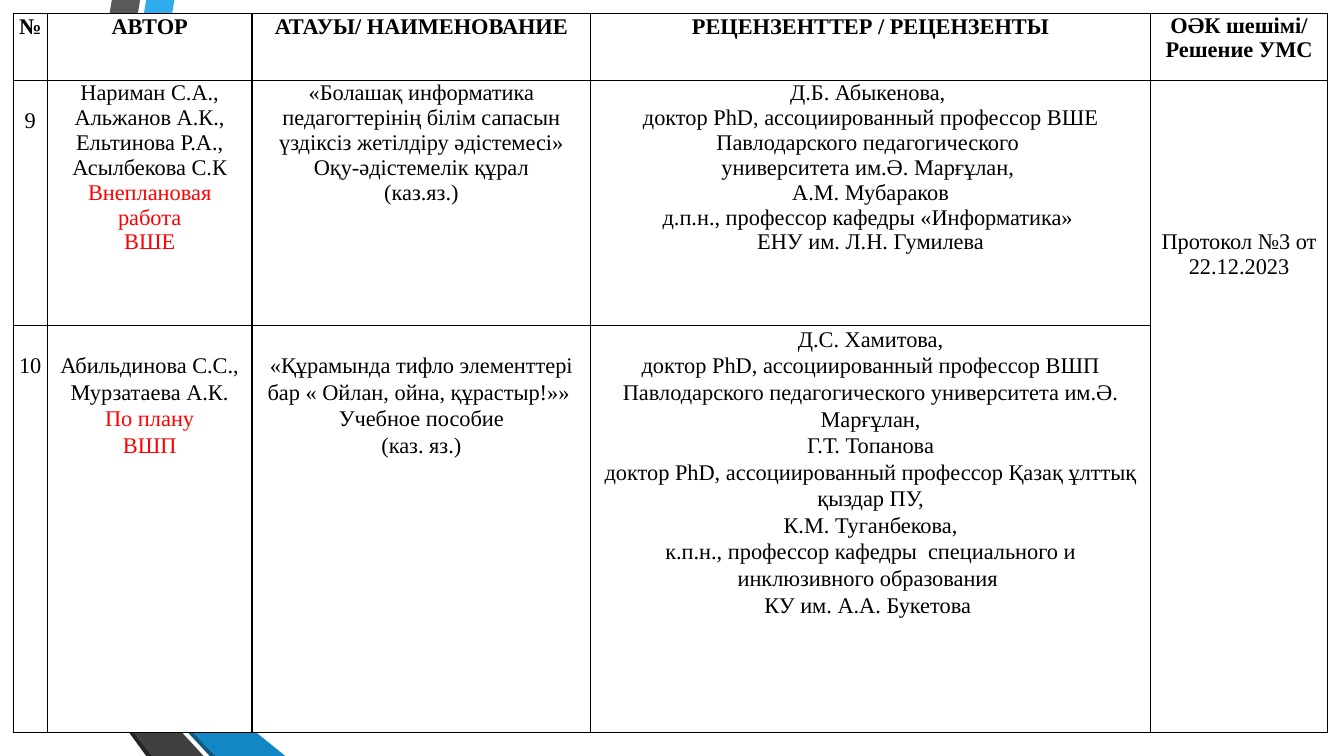
import pptx
import pptx.dml.color
import pptx.enum.text
import pptx.oxml
import pptx.oxml.ns
import pptx.util
from dataclasses import dataclass

Inches = pptx.util.Inches


@dataclass(frozen=True)
class Theme:
    font: str = "Times New Roman"
    text_size: int = 16
    border_width: int = 1
    text: str = "000000"
    accent: str = "FF0000"
    cell: str = "FFFFFF"
    light_blue: str = "30ACEC"
    blue: str = "1287C3"
    dark_blue: str = "0C5A82"
    light_grey: str = "595959"
    grey: str = "404040"
    dark_grey: str = "262626"


THEME = Theme()

RIBBONS = [
    (THEME.light_blue, [(0.5, 5.78), (0.77, 5.83), (1.73, 0), (1.45, 0)]),
    (THEME.light_grey, [(1.39, 0), (1.11, 0), (0.16, 5.73), (0.44, 5.77)]),
    (THEME.dark_grey, [(0.16, 5.73), (1.45, 7.5), (1.51, 7.5)]),
    (THEME.dark_blue, [(0.5, 5.79), (2.08, 7.5), (2.14, 7.5)]),
    (THEME.blue, [(0.5, 5.79), (2.14, 7.5), (2.83, 7.5), (0.77, 5.83), (0.5, 5.78)]),
    (THEME.grey, [(2.02, 7.5), (0.48, 5.83), (0.43, 5.77), (0.16, 5.73), (1.51, 7.5)]),
]

COLUMN_WIDTHS = [0.34, 2.03, 3.36, 5.55, 1.76]
ROW_HEIGHTS = [0.67, 2.43, 4.04]
HEADINGS = ["№", "АВТОР", "АТАУЫ/ НАИМЕНОВАНИЕ", "РЕЦЕНЗЕНТТЕР / РЕЦЕНЗЕНТЫ",
            "ОӘК шешімі/ Решение УМС"]
PROTOCOL = "Протокол №3 от 22.12.2023"
SINGLE, LOOSE = 1.0, 1.07


@dataclass
class Publication:
    number: str
    authors: list
    plan: list
    title: list
    reviewers: list
    spacing: float
    top: float


PUBLICATIONS = [
    Publication(
        "9",
        ["Нариман С.А.,", "Альжанов А.К.,", "Ельтинова Р.А.,", "Асылбекова С.К"],
        ["Внеплановая работа", "ВШЕ"],
        ["«Болашақ информатика педагогтерінің білім сапасын үздіксіз жетілдіру әдістемесі»",
         "Оқу-әдістемелік құрал", "(каз.яз.)"],
        ["Д.Б. Абыкенова, ",
         "доктор PhD, ассоциированный профессор ВШЕ Павлодарского педагогического ",
         "университета им.Ә. Марғұлан, ",
         "А.М. Мубараков",
         "д.п.н., профессор кафедры «Информатика» ",
         "ЕНУ им. Л.Н. Гумилева"],
        SINGLE, 0),
    Publication(
        "10",
        ["Абильдинова С.С.,", "Мурзатаева А.К."],
        ["По плану", "ВШП"],
        ["«Құрамында тифло элементтері бар « Ойлан, ойна, құрастыр!»» ",
         "Учебное пособие", "(каз. яз.)"],
        ["Д.С. Хамитова,",
         "доктор PhD, ассоциированный профессор ВШП Павлодарского педагогического "
         "университета им.Ә. Марғұлан,",
         "Г.Т. Топанова",
         "доктор PhD, ассоциированный профессор Қазақ ұлттық қыздар ПУ,",
         "К.М. Туганбекова,",
         "к.п.н., профессор кафедры  специального и инклюзивного образования ",
         "КУ им. А.А. Букетова "],
        LOOSE, 0.26),
]


def rgb(color):
    return pptx.dml.color.RGBColor.from_string(color)


def add_ribbons(slide, left, top):
    for color, points in RIBBONS:
        corners = [(Inches(left + x), Inches(top + y)) for x, y in points]
        builder = slide.shapes.build_freeform(*corners[0])
        builder.add_line_segments(corners[1:], close=True)
        ribbon = builder.convert_to_shape()
        ribbon.shadow.inherit = False
        ribbon.fill.solid()
        ribbon.fill.fore_color.rgb = rgb(color)
        ribbon.line.fill.background()


def style_cell(cell):
    """Borders go in before the fill, as the schema orders them."""
    properties = cell._tc.get_or_add_tcPr()
    width = pptx.util.Pt(THEME.border_width)
    for side in ("lnL", "lnR", "lnT", "lnB"):
        properties.append(pptx.oxml.parse_xml(
            f'<a:{side} {pptx.oxml.ns.nsdecls("a")} w="{width}"><a:solidFill>'
            f'<a:srgbClr val="{THEME.text}"/></a:solidFill></a:{side}>'))
    cell.fill.solid()
    cell.fill.fore_color.rgb = rgb(THEME.cell)


def fill_cell(cell, lines, accent_lines=(), spacing=SINGLE, top=0, side=0.07, bold=False):
    cell.margin_left = cell.margin_right = Inches(side)
    cell.margin_top, cell.margin_bottom = Inches(top), 0
    colored = [(line, THEME.text) for line in lines]
    colored += [(line, THEME.accent) for line in accent_lines]
    for index, (line, color) in enumerate(colored):
        frame = cell.text_frame
        paragraph = frame.add_paragraph() if index else frame.paragraphs[0]
        paragraph.text = line
        paragraph.alignment = pptx.enum.text.PP_ALIGN.CENTER
        paragraph.line_spacing = spacing
        paragraph.font.name = THEME.font
        paragraph.font.size = pptx.util.Pt(THEME.text_size)
        paragraph.font.bold = bold
        paragraph.font.color.rgb = rgb(color)


def add_publications_table(slide, left, top):
    table = slide.shapes.add_table(
        len(ROW_HEIGHTS), len(COLUMN_WIDTHS), Inches(left), Inches(top),
        Inches(sum(COLUMN_WIDTHS)), Inches(sum(ROW_HEIGHTS))).table
    table.first_row = table.horz_banding = False
    for column, width in zip(table.columns, COLUMN_WIDTHS):
        column.width = Inches(width)
    for row, height in zip(table.rows, ROW_HEIGHTS):
        row.height = Inches(height)
    for cell in table.iter_cells():
        style_cell(cell)

    last = len(HEADINGS) - 1
    for index, heading in enumerate(HEADINGS):
        fill_cell(table.cell(0, index), [heading], side=0.03, bold=True,
                  spacing=SINGLE if index == last else LOOSE)
    for row, item in enumerate(PUBLICATIONS, start=1):
        fill_cell(table.cell(row, 0), [item.number], spacing=LOOSE, top=0.26, side=0.03)
        fill_cell(table.cell(row, 1), item.authors, item.plan, item.spacing, item.top)
        fill_cell(table.cell(row, 2), item.title, spacing=item.spacing, top=item.top)
        fill_cell(table.cell(row, 3), item.reviewers, spacing=item.spacing)
    decision = table.cell(1, last)
    decision.merge(table.cell(len(PUBLICATIONS), last))
    fill_cell(decision, [PROTOCOL], top=1.48)


def main():
    presentation = pptx.Presentation()
    presentation.slide_width = Inches(13.33)
    presentation.slide_height = Inches(7.5)
    slide = presentation.slides.add_slide(presentation.slide_layouts[6])
    add_ribbons(slide, 0, 0)
    add_publications_table(slide, 0.13, 0.13)
    presentation.save("out.pptx")


if __name__ == "__main__":
    main()
